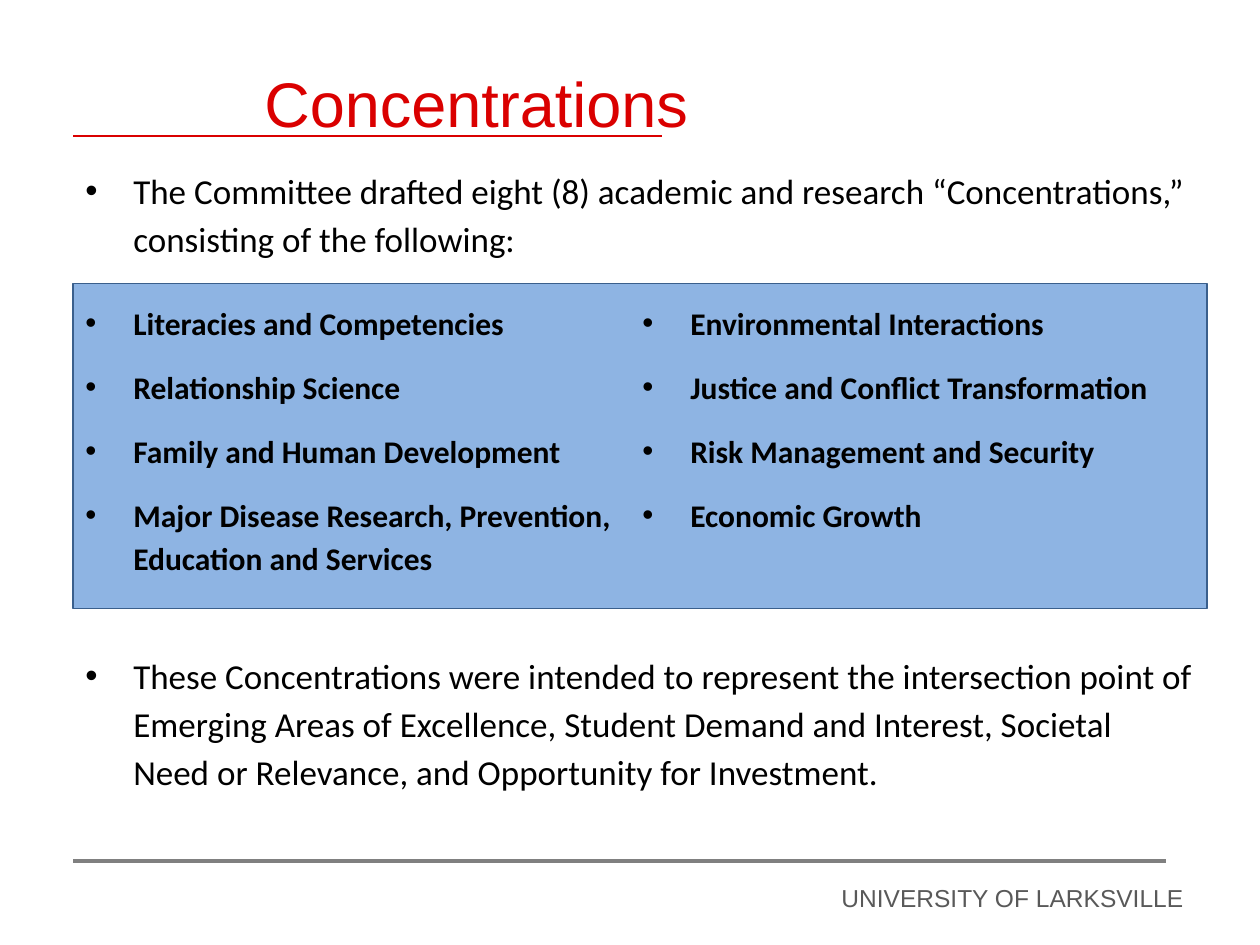
import pptx
import pptx.dml.color
import pptx.enum.shapes
import pptx.oxml.ns
import pptx.util
from lxml import etree

Inches = pptx.util.Inches
Pt = pptx.util.Pt
RGBColor = pptx.dml.color.RGBColor

RED = RGBColor(0xDA, 0x00, 0x00)
GRAY = RGBColor(0x80, 0x80, 0x80)
FOOTER_GRAY = RGBColor(0x59, 0x59, 0x59)
BLACK = RGBColor(0x00, 0x00, 0x00)
PANEL_BLUE = RGBColor(0x8E, 0xB4, 0xE3)
PANEL_EDGE = RGBColor(0x3A, 0x5F, 0x8C)

LEFT = 0.58
WIDTH = 9

TITLE_FORMAT = {"name": "Arial", "size": Pt(36)}
FOOTER_FORMAT = {"name": "Arial", "size": Pt(14)}
BODY_FORMAT = {"name": "Calibri", "size": Pt(20)}
CONCENTRATION_FORMAT = {"name": "Calibri", "size": Pt(18), "bold": True}
BULLET_SPACING = {"line_spacing": 1.14, "space_before": Pt(6), "space_after": Pt(6)}

INTRO = ("The Committee drafted eight (8) academic and research “Concentrations,” "
         "consisting of the following:")
PURPOSE = ("These Concentrations were intended to represent the intersection point of "
           "Emerging Areas of Excellence, Student Demand and Interest, Societal Need or "
           "Relevance, and Opportunity for Investment.")
LEFT_CONCENTRATIONS = [
    "Literacies and Competencies",
    "Relationship Science",
    "Family and Human Development",
    "Major Disease Research, Prevention, Education and Services",
]
RIGHT_CONCENTRATIONS = [
    "Environmental Interactions",
    "Justice and Conflict Transformation",
    "Risk Management and Security",
    "Economic Growth",
]


def set_attributes(target, values):
    for key, value in values.items():
        setattr(target, key, value)


def add_bullet(paragraph):
    """Give the paragraph a round bullet with a hanging indent."""
    set_attributes(paragraph, BULLET_SPACING)
    properties = paragraph._p.get_or_add_pPr()
    properties.set("marL", str(Inches(0.38)))
    properties.set("indent", str(Inches(-0.38)))
    for tag, values in (("a:buFont", {"typeface": "Arial"}), ("a:buChar", {"char": "•"})):
        etree.SubElement(properties, pptx.oxml.ns.qn(tag), values)


def add_text(slide, box, lines, font_format, color=BLACK, bulleted=False):
    frame = slide.shapes.add_textbox(*map(Inches, box)).text_frame
    frame.word_wrap = True
    for index, line in enumerate(lines):
        paragraph = frame.add_paragraph() if index else frame.paragraphs[0]
        if bulleted:
            add_bullet(paragraph)
        run = paragraph.add_run()
        run.text = line
        set_attributes(run.font, font_format)
        run.font.color.rgb = color


def add_rule(slide, y, right, color, weight):
    rule = slide.shapes.add_connector(
        pptx.enum.shapes.MSO_CONNECTOR.STRAIGHT,
        Inches(LEFT), Inches(y), Inches(right), Inches(y))
    rule.line.color.rgb = color
    rule.line.width = Pt(weight)
    etree.SubElement(rule._element.spPr, pptx.oxml.ns.qn("a:effectLst"))


def add_panel(slide, top, height):
    panel = slide.shapes.add_shape(
        pptx.enum.shapes.MSO_SHAPE.RECTANGLE,
        Inches(LEFT), Inches(top), Inches(WIDTH), Inches(height))
    panel.shadow.inherit = False
    panel.fill.solid()
    panel.fill.fore_color.rgb = PANEL_BLUE
    panel.line.color.rgb = PANEL_EDGE
    panel.line.width = Pt(1)


def main():
    deck = pptx.Presentation()
    deck.slide_width, deck.slide_height = Inches(10), Inches(7.5)
    slide = deck.slides.add_slide(deck.slide_layouts[6])

    add_panel(slide, 2.25, 2.58)
    add_text(slide, (LEFT, 2.32, 4.42, 2.33), LEFT_CONCENTRATIONS,
             CONCENTRATION_FORMAT, bulleted=True)
    add_text(slide, (5, 2.32, 4.58, 1.97), RIGHT_CONCENTRATIONS,
             CONCENTRATION_FORMAT, bulleted=True)

    add_rule(slide, 1.08, 5.25, RED, 1.5)
    add_rule(slide, 6.83, 9.25, GRAY, 2.25)

    add_text(slide, (2, 0.46, 8, 0.71), ["Concentrations"], TITLE_FORMAT, RED)
    add_text(slide, (LEFT, 1.25, WIDTH, 0.87), [INTRO], BODY_FORMAT, bulleted=True)
    add_text(slide, (6.58, 6.96, 3, 0.34), ["UNIVERSITY OF LARKSVILLE"],
             FOOTER_FORMAT, FOOTER_GRAY)
    add_text(slide, (LEFT, 5.1, WIDTH, 1.23), [PURPOSE], BODY_FORMAT, bulleted=True)

    deck.save("out.pptx")


if __name__ == "__main__":
    main()
